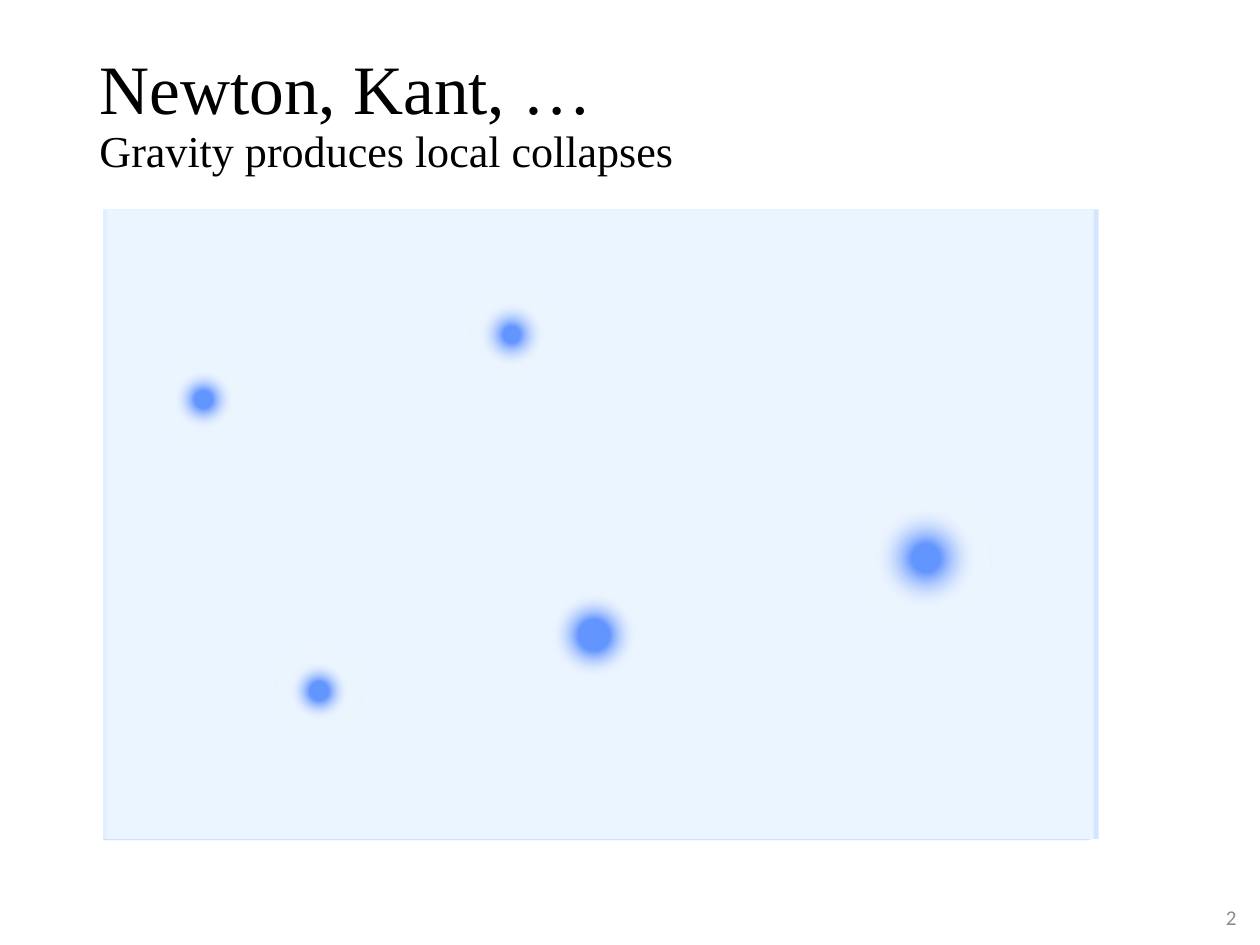
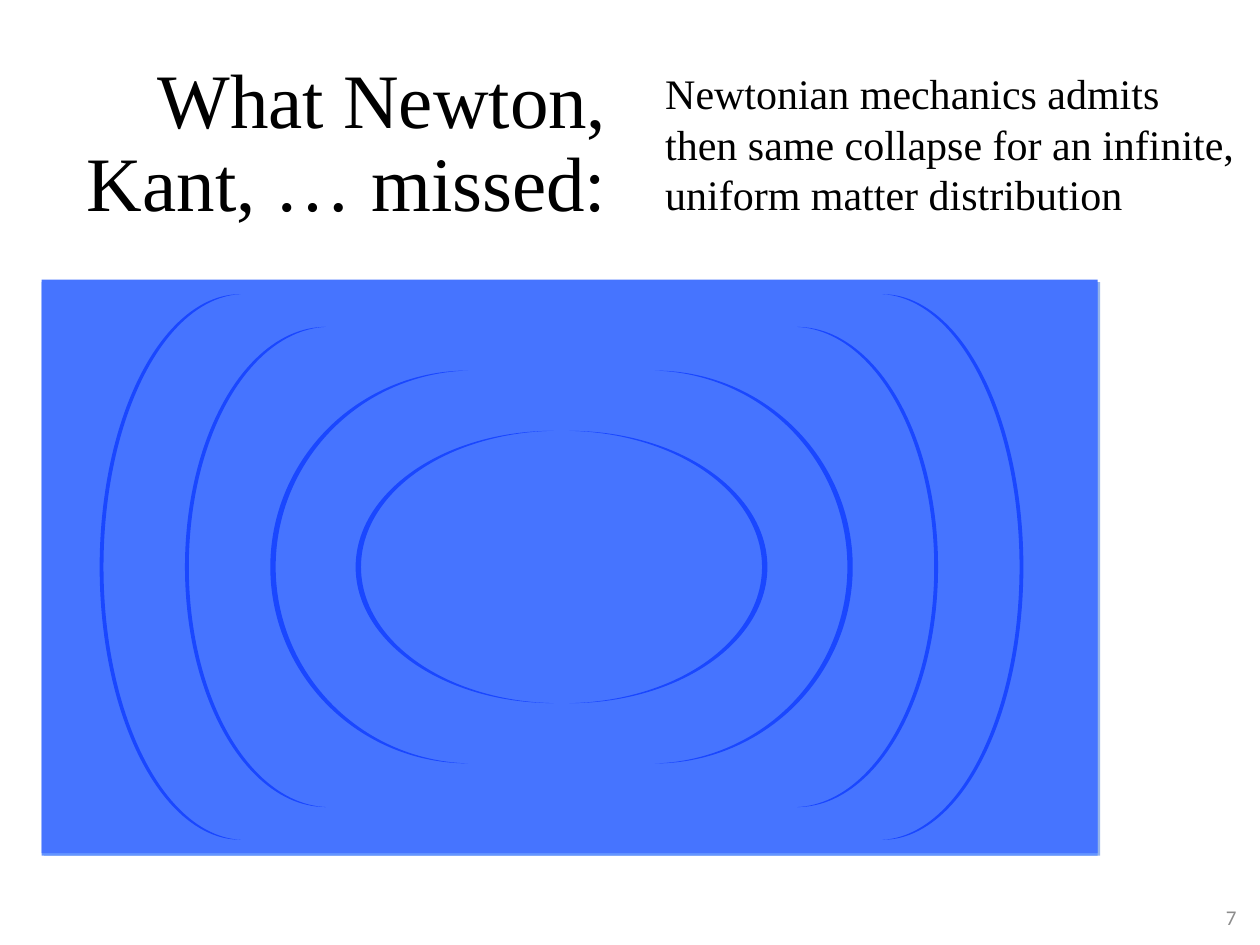
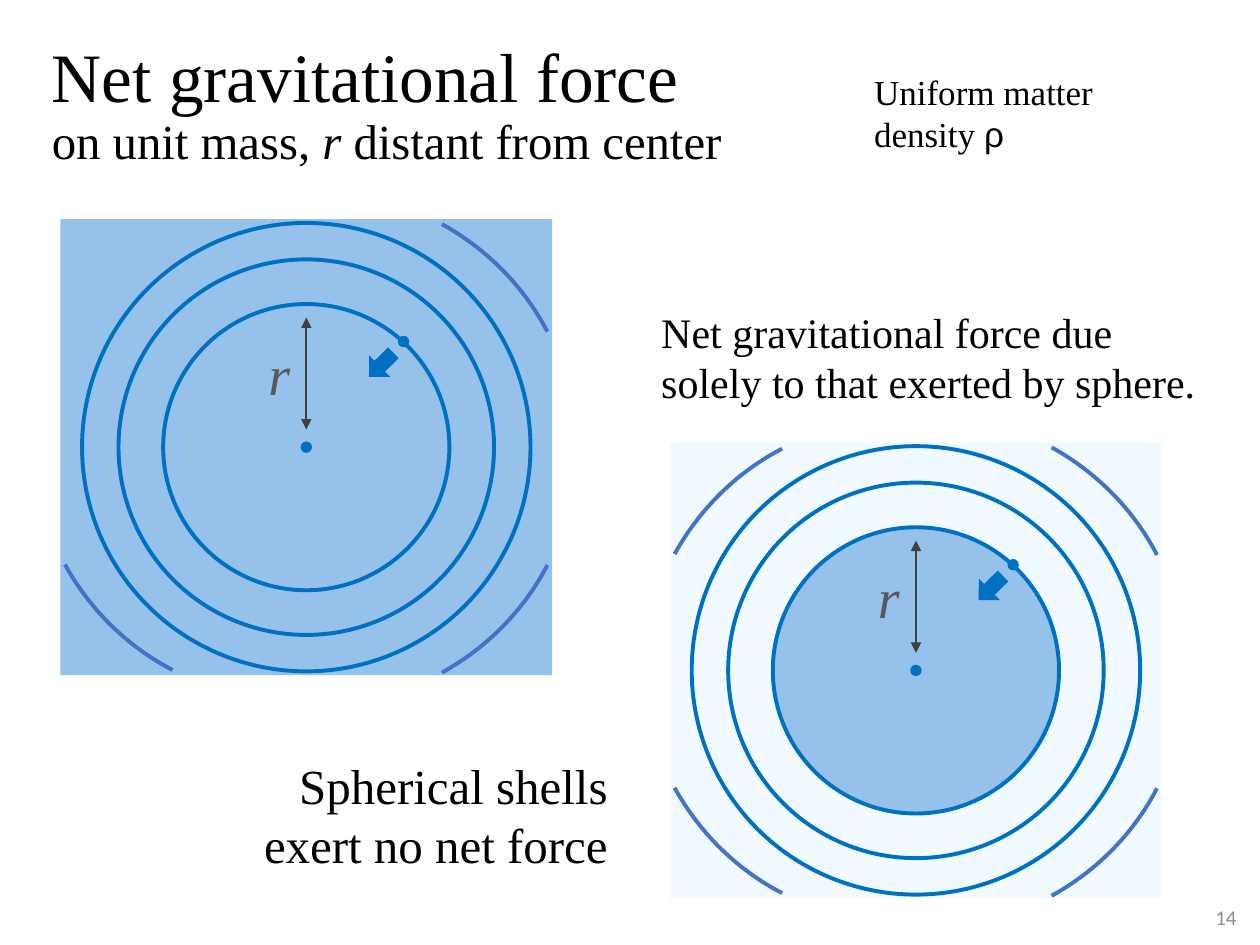
import copy
from dataclasses import dataclass

import pptx
import pptx.chart.data
import pptx.dml.color
import pptx.enum.shapes
import pptx.enum.text
import pptx.oxml
import pptx.oxml.ns
import pptx.util
from lxml import etree

Cm = pptx.util.Cm
SHAPE = pptx.enum.shapes.MSO_SHAPE
ALIGN = pptx.enum.text.PP_ALIGN
ANCHOR = pptx.enum.text.MSO_ANCHOR
FIT = pptx.enum.text.MSO_AUTO_SIZE
qn = pptx.oxml.ns.qn


@dataclass(frozen=True)
class Theme:
    serif: str = "Times New Roman"
    sans: str = "Calibri"
    greek: str = "Arial"
    ink: str = "000000"
    page_number: str = "8C8C8C"
    radius_label: str = "595959"
    radius_line: str = "404040"
    clump: str = "6496FF"
    clump_fade: str = "FFFFFF"
    field: str = "EBF5FF"
    field_edges: tuple = ("C8DCFF", "D4E6FF", "E1F0FF")
    collapse: str = "4674FF"
    collapse_edges: tuple = ("95B4EA", "6495FF")
    wave: str = "1A47FF"
    matter: str = "95C1EA"
    empty: str = "F0FAFF"
    shell: str = "0070C0"
    outer_arc: str = "4472C4"
    title_size: float = 39.6
    big_title_size: float = 44
    subtitle_size: float = 25.2
    long_subtitle_size: float = 27.9
    body_size: float = 24
    remark_size: float = 28
    note_size: float = 20
    radius_size: float = 32
    number_size: float = 12
    shell_width: float = 2.25
    radius_width: float = 1


THEME = Theme()


def rgb(value):
    return pptx.dml.color.RGBColor.from_string(value)


def write(frame, text, size=THEME.body_size, font=THEME.serif, color=THEME.ink,
          italic=False, align=ALIGN.LEFT, anchor=ANCHOR.TOP, spacing=None,
          wrap=True, fit=FIT.NONE):
    """Fill a frame; text is a string or (string, overrides) pieces, None breaks the line."""
    frame.word_wrap = wrap
    frame.auto_size = fit
    frame.vertical_anchor = anchor
    paragraph = frame.paragraphs[0]
    paragraph.alignment = align
    paragraph.line_spacing = spacing
    base = {"size": size, "font": font, "color": color, "italic": italic}
    run = None
    for piece in [(text, {})] if isinstance(text, str) else text:
        if piece is None:
            paragraph.add_line_break()
            line_break = paragraph._p.findall(qn("a:br"))[-1]
            line_break.append(copy.deepcopy(run.font._element))
            continue
        words, overrides = piece
        look = {**base, **overrides}
        run = paragraph.add_run()
        run.text = words
        run.font.size = pptx.util.Pt(look["size"])
        run.font.name = look["font"]
        run.font.italic = look["italic"]
        run.font.color.rgb = rgb(look["color"])


def add_text(slide, box, text, **look):
    frame = slide.shapes.add_textbox(*map(Cm, box)).text_frame
    write(frame, text, **look)


def add_figure(slide, kind, box, fill=None, line=None, rotation=0, adjust=(), flip=False):
    shape = slide.shapes.add_shape(kind, *map(Cm, box))
    shape.shadow.inherit = False
    if fill:
        shape.fill.solid()
        shape.fill.fore_color.rgb = rgb(fill)
    else:
        shape.fill.background()
    if line:
        shape.line.color.rgb = rgb(line)
        shape.line.width = pptx.util.Pt(THEME.shell_width)
    else:
        shape.line.fill.background()
    shape.rotation = rotation
    for index, value in enumerate(adjust):
        shape.adjustments[index] = value
    if flip:
        shape.element.spPr.find(qn("a:xfrm")).set("flipV", "1")
    return shape


def around(x, y, width, height=None):
    """Box of the given size centred on a point."""
    height = width if height is None else height
    return x - width / 2, y - height / 2, width, height


def start_slide(deck, number, title_box, title, **look):
    slide = deck.slides.add_slide(deck.slide_layouts[5])
    heading = slide.shapes.title
    heading.left, heading.top, heading.width, heading.height = map(Cm, title_box)
    write(heading.text_frame, title, anchor=ANCHOR.MIDDLE, spacing=0.9, **look)
    add_text(slide, (24.21, 17.98, 0.97, 1.02), str(number), size=THEME.number_size,
             font=THEME.sans, color=THEME.page_number, align=ALIGN.RIGHT,
             anchor=ANCHOR.MIDDLE)
    return slide


def fade_radially(shape, core, edge):
    """Glow from a solid core (percent) to clear at the edge (percent)."""
    properties = shape.element.spPr
    gradient = etree.Element(qn("a:gradFill"), rotWithShape="1")
    stops = etree.SubElement(gradient, qn("a:gsLst"))
    for position, color, opacity in ((core, THEME.clump, 100), (edge, THEME.clump_fade, 0),
                                     (100, THEME.clump_fade, 22)):
        stop = etree.SubElement(stops, qn("a:gs"), pos=str(position * 1000))
        tint = etree.SubElement(stop, qn("a:srgbClr"), val=color)
        if opacity < 100:
            etree.SubElement(tint, qn("a:alpha"), val=str(opacity * 1000))
    path = etree.SubElement(gradient, qn("a:path"), path="circle")
    etree.SubElement(path, qn("a:fillToRect"), l="50000", t="50000", r="50000", b="50000")
    properties.replace(properties.find(qn("a:noFill")), gradient)


def draw_matter_field(slide, box):
    left, top, width, height = box
    offsets = ((-0.08, 0.02), (0.1, 0), (-0.08, 0))
    for (dx, dy), color in zip(offsets, THEME.field_edges):
        add_figure(slide, SHAPE.RECTANGLE, (left + dx, top + dy, width, height), color)
    add_figure(slide, SHAPE.RECTANGLE, box, THEME.field)
    clumps = ((1.12, 3, 1.65, 15, 54), (3.4, 8.84, 1.75, 15, 50), (8.94, 7.7, 1.75, 25, 72),
              (15.19, 5.72, 2.64, 15, 58), (7.32, 1.7, 1.65, 14, 59))
    for x, y, size, core, edge in clumps:
        clump = add_figure(slide, SHAPE.OVAL, (left + x, top + y, size, size))
        fade_radially(clump, core, edge)


def draw_collapse(slide, box):
    """Stacked fields with pairs of crescents mirrored about a vertical axis."""
    left, top, width, height = box
    for dx, color in zip((0.05, 0), THEME.collapse_edges):
        add_figure(slide, SHAPE.RECTANGLE, (left + dx, top + 0.05, width, height), color)
    add_figure(slide, SHAPE.RECTANGLE, box, THEME.collapse)
    axis, middle = left + 10.48, top + 5.79
    crescents = ((2.84, 11), (2.84, 9.68), (3.99, 7.92), (3.99, 5.49))
    for index, (breadth, tall) in enumerate(crescents):
        reach = 9.31 - 1.72 * index - breadth / 2
        for side, rotation in ((-1, 0), (1, 180)):
            add_figure(slide, SHAPE.MOON, around(axis + side * reach, middle, breadth, tall),
                       THEME.wave, rotation=rotation, adjust=(0.027,))


def draw_radius(slide, x, top, bottom):
    radius = slide.shapes.add_connector(pptx.enum.shapes.MSO_CONNECTOR.STRAIGHT,
                                        Cm(x), Cm(top), Cm(x), Cm(bottom))
    radius.line.color.rgb = rgb(THEME.radius_line)
    radius.line.width = pptx.util.Pt(THEME.radius_width)
    outline = radius.line._get_or_add_ln()
    for end in ("a:headEnd", "a:tailEnd"):
        etree.SubElement(outline, qn(end), type="triangle")
    etree.SubElement(radius.element.spPr, qn("a:effectLst"))


def draw_shells(slide, box, background, sphere, corners):
    """Sphere of radius r inside spherical shells, with outer arcs at the named corners."""
    left, top, width, height = box
    x, y = left + width / 2, top + height / 2
    add_figure(slide, SHAPE.RECTANGLE, box, background)
    for diameter, fill in ((5.77, sphere), (7.57, None), (9.04, None)):
        add_figure(slide, SHAPE.OVAL, around(x, y, diameter), fill, THEME.shell)
    for dx, dy in ((0, 0), (1.96, -2.13)):
        add_figure(slide, SHAPE.OVAL, around(x + dx, y + dy, 0.23), THEME.shell)
    add_figure(slide, SHAPE.LEFT_ARROW, around(x + 1.51, y - 1.66, 0.69, 0.61),
               THEME.shell, rotation=315.6)
    arcs = {"top right": (0.03, -0.06, 0, False), "bottom right": (0.03, 0.11, 0, True),
            "bottom left": (-0.43, -0.34, 90, True), "top left": (-0.43, 0.36, 270, False)}
    for corner in corners:
        dx, dy, rotation, flip = arcs[corner]
        add_figure(slide, SHAPE.ARC, around(x + dx, y + dy, 10.77, 10.26),
                   line=THEME.outer_arc, rotation=rotation, flip=flip,
                   adjust=(180.838, 200.913))
    add_text(slide, (left + 3.94, top + 2.29, 0.97, 1.63), "r", size=THEME.radius_size,
             color=THEME.radius_label, italic=True, wrap=False, fit=FIT.SHAPE_TO_FIT_TEXT)
    draw_radius(slide, x, top + 1.98, top + 4.24)


def build_local_collapses(deck):
    title = [("Newton, Kant, …", {}), None,
             ("Gravity produces local collapses", {"size": THEME.subtitle_size})]
    slide = start_slide(deck, 2, (1.75, 1.02, 21.9, 2.62), title, size=THEME.title_size)
    draw_matter_field(slide, (2.16, 4.22, 19.89, 12.7))


def build_missed_collapse(deck):
    slide = start_slide(deck, 7, (0.86, 1.09, 11.63, 3.68), "What Newton, Kant, … missed:",
                        size=THEME.big_title_size, align=ALIGN.RIGHT)
    add_text(slide, (13.16, 1.24, 12.01, 3.33),
             "Newtonian mechanics admits then same collapse for an infinite, "
             "uniform matter distribution", fit=FIT.SHAPE_TO_FIT_TEXT)
    draw_collapse(slide, (0.84, 5.64, 21.29, 11.56))


def build_net_force(deck):
    small = {"size": THEME.long_subtitle_size}
    title = [("Net gravitational force", {}), None, ("on unit mass, ", small),
             ("r", {**small, "italic": True}), (" distant from center", small)]
    slide = start_slide(deck, 14, (0.79, 1.37, 15.37, 1.55), title, size=THEME.title_size)
    corners = ("top right", "bottom right", "bottom left")
    draw_shells(slide, (1.22, 4.42, 9.91, 9.19), THEME.matter, None, corners)
    draw_shells(slide, (13.51, 8.92, 9.91, 9.19), THEME.empty, THEME.matter,
                corners + ("top left",))
    grow = FIT.SHAPE_TO_FIT_TEXT
    add_text(slide, (17.37, 1.3, 6.55, 1.96),
             [("Uniform matter density ", {}), ("ρ", {"font": THEME.greek})],
             size=THEME.note_size, fit=grow)
    add_text(slide, (4.52, 15.11, 7.98, 2.64), "Spherical shells exert no net force",
             size=THEME.remark_size, align=ALIGN.RIGHT, fit=grow)
    add_text(slide, (13.08, 6.05, 11.51, 2.31),
             "Net gravitational force due solely to that exerted by sphere.", fit=grow)


def main():
    deck = pptx.Presentation()
    deck.slide_width, deck.slide_height = Cm(25.4), Cm(19.05)
    build_local_collapses(deck)
    build_missed_collapse(deck)
    build_net_force(deck)
    deck.save("out.pptx")


if __name__ == "__main__":
    main()
